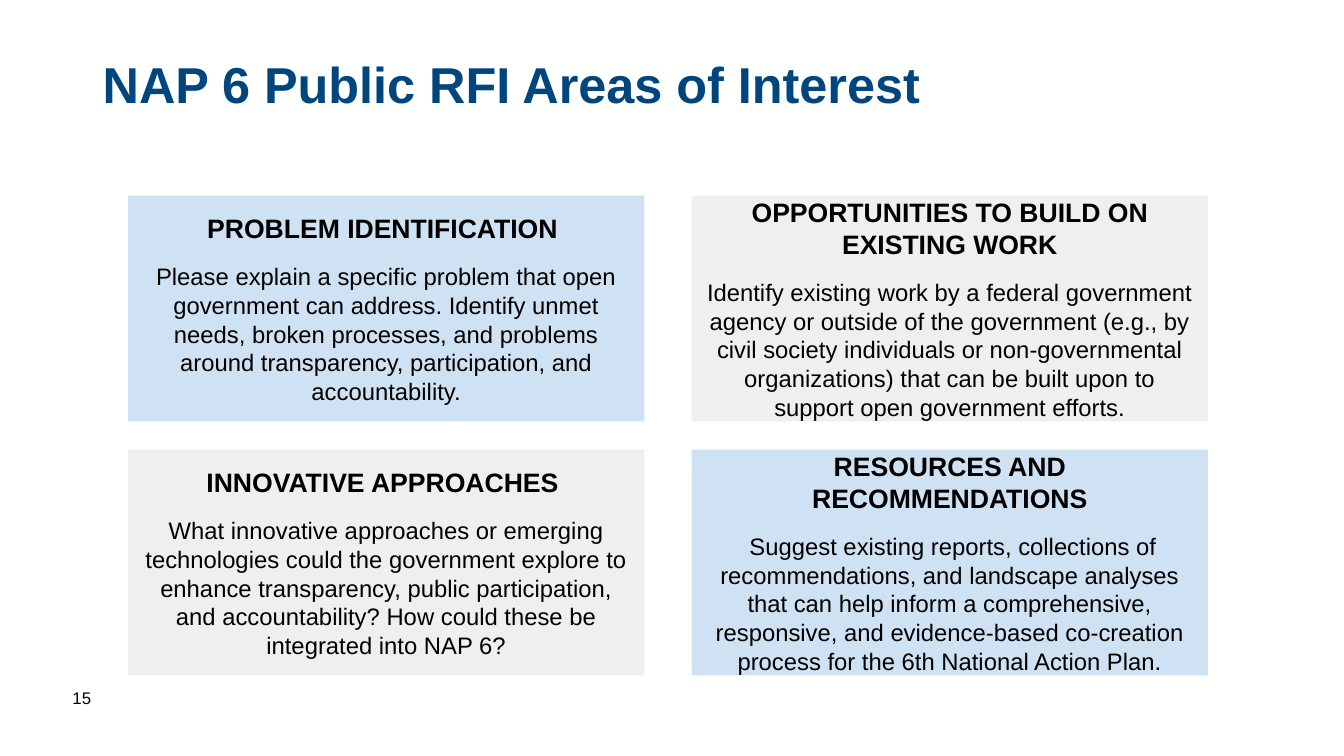
"""Build the slide on the areas of interest of the NAP 6 public RFI."""
import pptx
import pptx.dml.color
import pptx.enum.shapes
import pptx.enum.text
import pptx.util

Inches = pptx.util.Inches
Pt = pptx.util.Pt
MIDDLE = pptx.enum.text.MSO_ANCHOR.MIDDLE
BLUE, GREY = "CFE2F3", "EFEFEF"


def color(hex_string):
    return pptx.dml.color.RGBColor.from_string(hex_string)


def format_text(paragraph, size, hex_string, bold=False):
    for run in paragraph.runs:
        run.font.name = "Arial"
        run.font.size = Pt(size)
        run.font.bold = bold
        run.font.color.rgb = color(hex_string)


presentation = pptx.Presentation()
presentation.slide_width = Inches(13.33)
presentation.slide_height = Inches(7.5)
slide = presentation.slides.add_slide(presentation.slide_layouts[6])

labels = [
    ("NAP 6 Public RFI Areas of Interest", 0.92, 0.34, 11.5, 1.05, 36, "00467E", True, 0.9),
    ("15", 0.62, 6.72, 0.65, 0.4, 12, "000000", False, 1.0),
]
for text, left, top, width, height, size, text_color, bold, line_spacing in labels:
    box = slide.shapes.add_textbox(Inches(left), Inches(top), Inches(width), Inches(height))
    box.text_frame.word_wrap = True
    box.text_frame.vertical_anchor = MIDDLE
    box.text_frame.text = text
    paragraph = box.text_frame.paragraphs[0]
    paragraph.line_spacing = line_spacing
    format_text(paragraph, size, text_color, bold)

areas = [
    ("PROBLEM IDENTIFICATION ",
     "Please explain a specific problem that open government can address. Identify unmet needs, "
     "broken processes, and problems around transparency, participation, and accountability.", BLUE),
    ("OPPORTUNITIES TO BUILD ON EXISTING WORK",
     "Identify existing work by a federal government agency or outside of the government (e.g., by "
     "civil society individuals or non-governmental organizations) that can be built upon to "
     "support open government efforts.", GREY),
    ("INNOVATIVE APPROACHES ",
     "What innovative approaches or emerging technologies could the government explore to enhance "
     "transparency, public participation, and accountability? How could these be integrated into "
     "NAP 6?", GREY),
    ("RESOURCES AND RECOMMENDATIONS",
     " Suggest existing reports, collections of recommendations, and landscape analyses that can "
     "help inform a comprehensive, responsive, and evidence-based co-creation process for the 6th "
     "National Action Plan.", BLUE),
]
for index, (heading, description, fill_color) in enumerate(areas):
    row, column = divmod(index, 2)
    shape = slide.shapes.add_shape(
        pptx.enum.shapes.MSO_SHAPE.RECTANGLE,
        Inches(1.27 + 5.59 * column), Inches(1.94 + 2.52 * row), Inches(5.12), Inches(2.24))
    shape.shadow.inherit = False
    shape.fill.solid()
    shape.fill.fore_color.rgb = color(fill_color)
    shape.line.fill.background()
    frame = shape.text_frame
    frame.word_wrap = True
    frame.vertical_anchor = MIDDLE
    frame.margin_left = frame.margin_right = Inches(0.13)
    frame.margin_top = frame.margin_bottom = Inches(0.13)
    frame.text = f"{heading}\n{description}"
    for paragraph in frame.paragraphs:
        paragraph.alignment = pptx.enum.text.PP_ALIGN.CENTER
    format_text(frame.paragraphs[0], 19, "000000", True)
    format_text(frame.paragraphs[1], 17, "000000")
    frame.paragraphs[1].space_before = Pt(13)

presentation.save("out.pptx")
